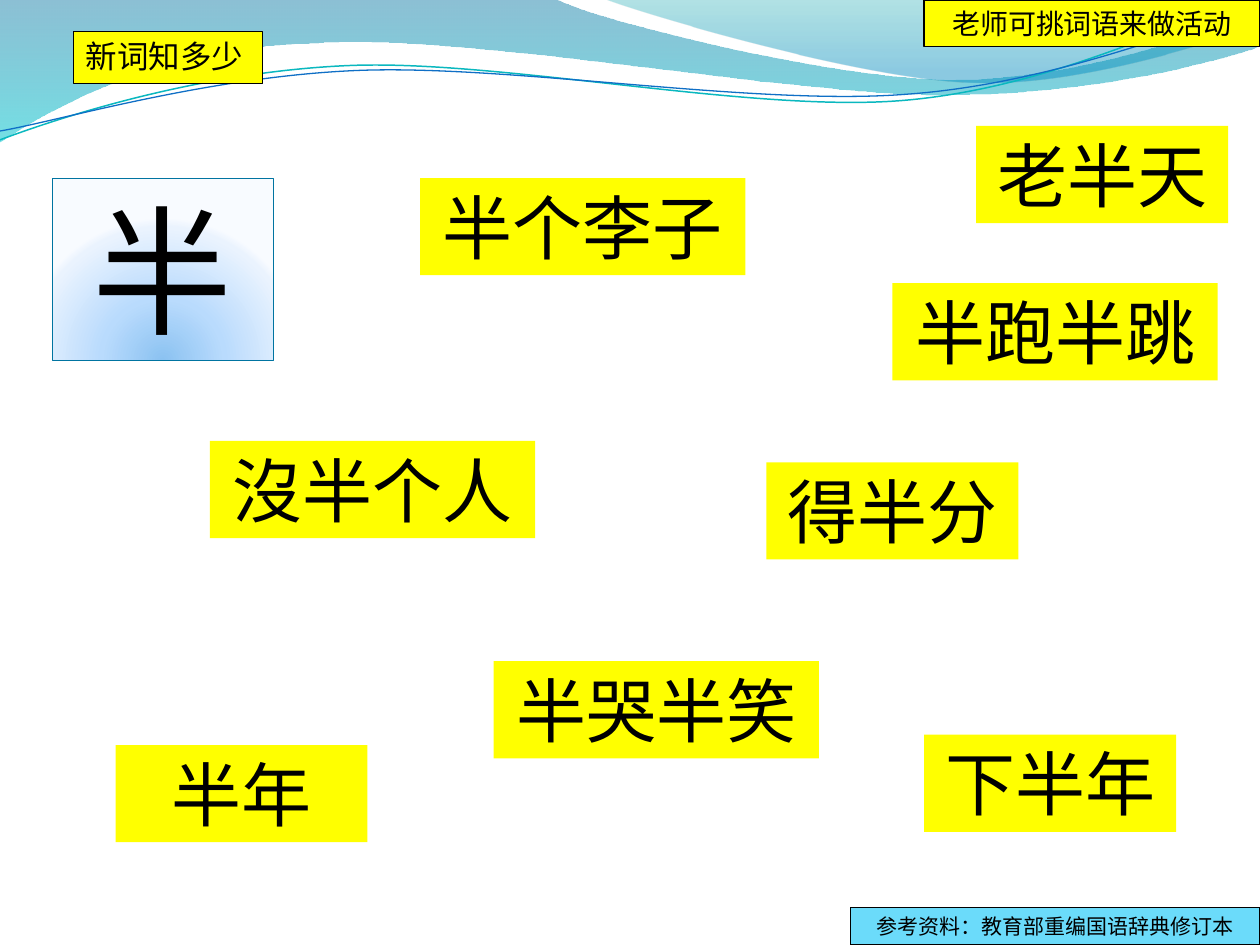
from itertools import chain
from math import cos, radians, sin

from lxml.etree import SubElement
from pptx import Presentation
from pptx.dml.color import RGBColor
from pptx.enum.shapes import MSO_SHAPE as Shape
from pptx.enum.text import MSO_ANCHOR as Anchor, MSO_AUTO_SIZE as AutoSize, PP_ALIGN as Align
from pptx.oxml import parse_xml
from pptx.oxml.ns import nsdecls, qn
from pptx.util import Cm, Pt

YELLOW, BLACK = "FFFF00", "000000"


def paint(color_format, value):
    color_format.rgb = RGBColor.from_string(value)


def turn(points, degrees, center):
    c, s = cos(radians(degrees)), sin(radians(degrees))
    offsets = [(x - center[0], y - center[1]) for x, y in points]
    return [(center[0] + dx * c - dy * s, center[1] + dx * s + dy * c) for dx, dy in offsets]


class WordSlide:
    """Draws waves and word cards in one style on a slide."""

    font = "Noto Sans CJK SC"

    def __init__(self, slide):
        self.slide = slide

    def outline(self, shape, color, width):
        shape.line.fill.solid()
        paint(shape.line.color, color)
        shape.line.width = Pt(width)

    def gradient(self, shape, stops, direction):
        shape.fill.gradient()
        grad = shape._element.spPr.find(qn("a:gradFill"))
        for child in list(grad):
            grad.remove(child)
        stop_list = SubElement(grad, qn("a:gsLst"))
        for position, color, alpha in stops:
            stop = SubElement(stop_list, qn("a:gs"), pos=str(position * 1000))
            tone = SubElement(stop, qn("a:srgbClr"), val=color)
            if alpha < 100:
                SubElement(tone, qn("a:alpha"), val=str(alpha * 1000))
        grad.append(parse_xml(direction))

    def freeform(self, segments, close):
        spots = [(Cm(2.54 * x), Cm(2.54 * y)) for x, y in chain(*segments)]
        builder = self.slide.shapes.build_freeform(*spots[0])
        builder.add_line_segments(spots[1:], close=close)
        shape = builder.convert_to_shape()
        shape.shadow.inherit = False
        lines = iter(list(shape._element.spPr.iter(qn("a:lnTo"))))
        for segment in segments[1:]:
            pieces = [next(lines) for point in segment]
            if len(pieces) == 3:
                curve = pieces[0].makeelement(qn("a:cubicBezTo"))
                pieces[0].addprevious(curve)
                for piece in pieces:
                    curve.append(piece[0])
                    piece.getparent().remove(piece)
        return shape

    def wave(self, segments, stops):
        shape = self.freeform(segments, True)
        shape.line.fill.background()
        self.gradient(shape, stops, f'<a:lin {nsdecls("a")} ang="5400000" scaled="0"/>')

    def ripple(self, segments, center, color, width, tilt=-2.7):
        shape = self.freeform([turn(segment, -tilt, center) for segment in segments], False)
        shape.fill.background()
        self.outline(shape, color, width)
        shape.rotation = tilt

    def card(self, text, left, top, width, height, size=40, fill=YELLOW, border=None, align=Align.CENTER):
        shape = self.slide.shapes.add_shape(Shape.RECTANGLE, Cm(left), Cm(top), Cm(width), Cm(height))
        shape.shadow.inherit = False
        shape.fill.solid()
        paint(shape.fill.fore_color, fill)
        if border:
            self.outline(shape, border, 0.75)
        else:
            shape.line.fill.background()
        frame = shape.text_frame
        layout = {"word_wrap": True, "auto_size": AutoSize.SHAPE_TO_FIT_TEXT, "vertical_anchor": Anchor.TOP}
        for name, value in layout.items():
            setattr(frame, name, value)
        paragraph = frame.paragraphs[0]
        paragraph.alignment = align
        run = paragraph.add_run()
        run.text = text
        for name, value in {"name": self.font, "size": Pt(size)}.items():
            setattr(run.font, name, value)
        paint(run.font.color, BLACK)
        SubElement(run.font._element, qn("a:ea"), typeface=self.font)
        return shape

    def key_character(self, text, left, top, width, height):
        shape = self.card(text, left, top, width, height, 80, border="0074A1")
        self.gradient(
            shape,
            [(0, "8BC2F1", 100), (43, "B9DBFD", 100), (93, "EAF3FE", 100), (100, "F8FBFF", 100)],
            f'<a:path {nsdecls("a")} path="circle">'
            '<a:fillToRect l="50000" t="130000" r="50000" b="-30000"/></a:path>',
        )


def main():
    deck = Presentation()
    deck.slide_width, deck.slide_height = Cm(25.4), Cm(19.05)
    page = WordSlide(deck.slides.add_slide(deck.slide_layouts[6]))

    page.wave(
        [[(0, 0)], [(4.4, -0.01)],
         [(4.76, 0.17), (6.64, 0.63), (7.58, 0.63)],
         [(8.53, 0.63), (9.58, 0.26), (10, 0.09)],
         [(10.01, 0.36)],
         [(9.83, 0.44), (8.7, 0.76), (7.46, 0.75)],
         [(6.22, 0.75), (3.82, 0.28), (2.57, 0.34)],
         [(1.29, 0.36), (0.46, 0.83), (-0.01, 1.13)],
         [(0, 0)]],
        [(0, "0074A1", 45), (100, "00C6CF", 55)])
    page.wave(
        [[(4.79, -0.01)],
         [(5.09, 0.11), (6.82, 0.62), (7.69, 0.65)],
         [(8.56, 0.69), (9.61, 0.32), (10, 0.21)],
         [(10, 0)], [(4.79, -0.01)]],
        [(0, "00A1A9", 30), (80, "008BBF", 45)])
    page.ripple(
        [[(0, 1.11)],
         [(0.48, 0.93), (1.58, 0.57), (2.77, 0.52)],
         [(3.95, 0.47), (5.93, 0.89), (7.13, 0.8)],
         [(8.33, 0.71), (9.38, 0.15), (9.98, -0.02)]],
        (4.99, 0.58), "0AB8BF", 0.85)
    page.ripple(
        [[(0, 1.04)],
         [(0.47, 0.96), (1.64, 0.61), (2.83, 0.56)],
         [(4.03, 0.51), (5.97, 0.84), (7.17, 0.75)],
         [(8.36, 0.67), (9.41, 0.21), (10, 0.06)]],
        (5, 0.59), "0F6FC6", 0.75)

    words = [
        ("沒半个人", 4.23, 8.89), ("下半年", 18.63, 14.81), ("半个李子", 8.47, 3.59),
        ("半年", 2.33, 15.02), ("得半分", 15.45, 9.32),
    ]
    later_words = [("半跑半跳", 17.99, 5.71), ("半哭半笑", 9.95, 13.33), ("老半天", 19.68, 2.54)]
    for group in (words, later_words):
        for word, left, top in group:
            page.card(word, left, top, 6.56 if len(word) == 4 else 5.08, 1.96)
        if group is words:
            page.key_character("半", 1.06, 3.6, 4.45, 3.67)

    page.card("新词知多少", 1.48, 0.63, 3.81, 1.06, 18, border=BLACK, align=Align.LEFT)
    page.card("老师可挑词语来做活动", 18.63, 0, 6.77, 0.94, 16, border=BLACK)
    page.card("参考资料：教育部重编国语辞典修订本", 17.15, 18.29, 8.25, 0.76, 12, "6BDBFA", BLACK)

    deck.save("out.pptx")


if __name__ == "__main__":
    main()
